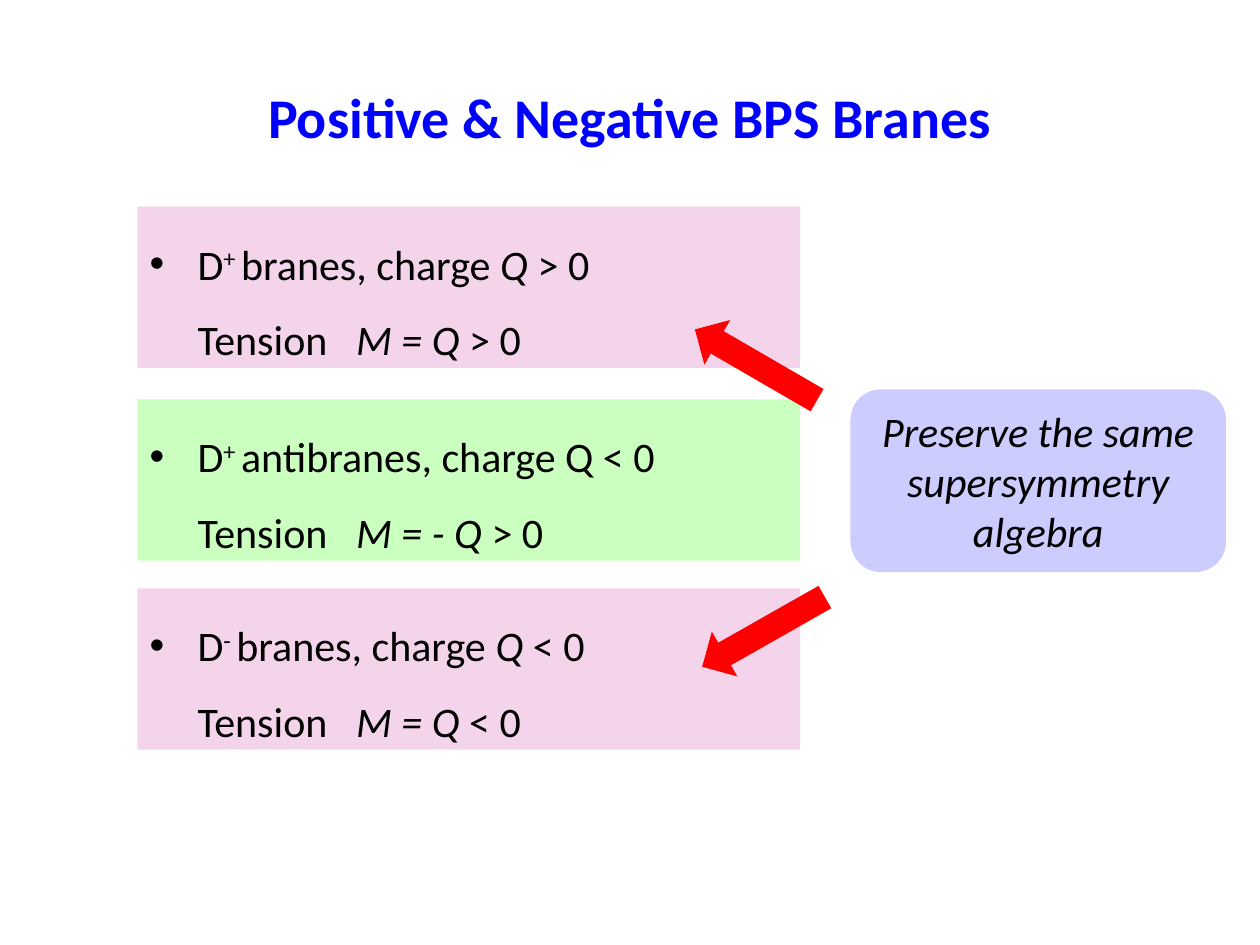
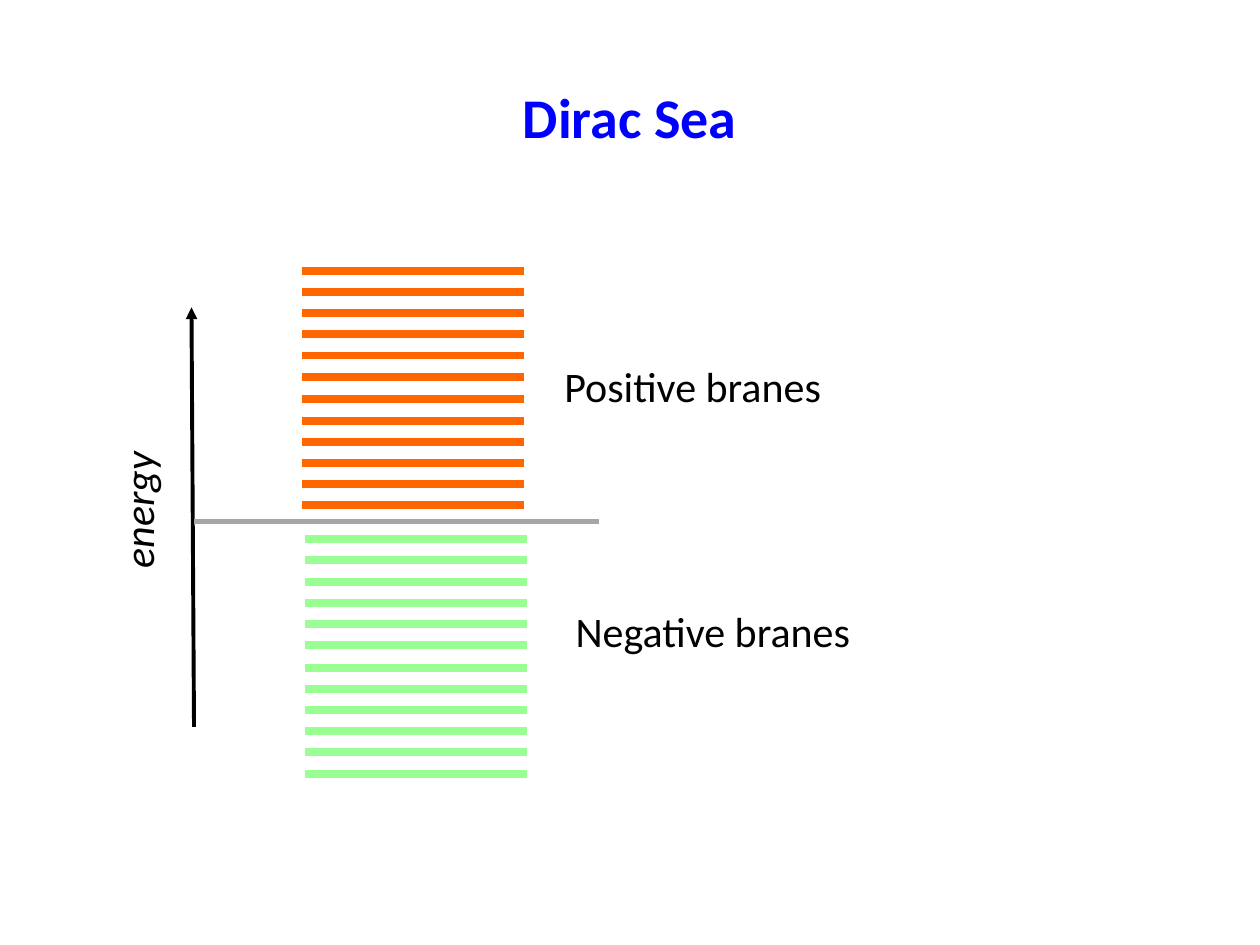
import dataclasses

import pptx
import pptx.dml.color
import pptx.enum.shapes
import pptx.enum.text
import pptx.oxml
import pptx.oxml.ns
import pptx.util

Inches, Pt = pptx.util.Inches, pptx.util.Pt
Shape = pptx.enum.shapes.MSO_SHAPE
Align = pptx.enum.text.PP_ALIGN
Anchor = pptx.enum.text.MSO_ANCHOR
Fit = pptx.enum.text.MSO_AUTO_SIZE


@dataclasses.dataclass(frozen=True)
class Theme:
    font: str = "Calibri"
    head: int = 32
    body: int = 24
    ink: str = "000000"
    blue: str = "0000FF"
    pink: str = "F3D4EB"
    mint: str = "CAFFC0"
    lilac: str = "CCCCFF"
    red: str = "FF0000"
    orange: str = "FF6600"
    green: str = "99FF92"
    gray: str = "A6A6A6"


def rgb(code):
    return pptx.dml.color.RGBColor.from_string(code)


def add_xml(parent, tag, **attrs):
    node = pptx.oxml.parse_xml(f"<a:{tag} {pptx.oxml.ns.nsdecls('a')}/>")
    for name, value in attrs.items():
        node.set(name, str(value))
    parent.append(node)


def write(frame, lines, font, size, color, bold=False, align=Align.LEFT,
          anchor=Anchor.TOP, wrap=True, grow=True, space=None, bullet=None):
    """Fill a frame with paragraphs, each a list of (text, style) runs.

    Styles are "", "italic", "super", "gap" (a wide space) and "break".
    """
    frame.word_wrap = wrap
    frame.vertical_anchor = anchor
    frame.auto_size = Fit.SHAPE_TO_FIT_TEXT if grow else Fit.NONE
    for i, runs in enumerate(lines):
        para = frame.add_paragraph() if i else frame.paragraphs[0]
        para.alignment = align
        if space:
            para.line_spacing = space
        if bullet:
            props = para._p.get_or_add_pPr()
            hang = Inches(0.38)
            props.set("marL", str(hang))
            props.set("indent", str(-hang))
            add_xml(props, "buFont", typeface="Arial")
            add_xml(props, "buChar", char=bullet)
        for text, style in runs:
            if style == "break":
                para.add_line_break()
                continue
            run = para.add_run()
            run.text = text
            run.font.name = font
            run.font.size = Pt(size)
            run.font.bold = bold
            run.font.italic = style == "italic"
            run.font.color.rgb = rgb(color)
            if style == "super":
                run.font._element.set("baseline", "30000")
            elif style == "gap":
                run.font._element.set("spc", "1085")


class Deck:
    def __init__(self, theme):
        self.theme = theme
        self.file = pptx.Presentation()
        self.file.slide_width = Inches(10)
        self.file.slide_height = Inches(7.5)
        self.slide = None

    def page(self, title):
        self.slide = self.file.slides.add_slide(self.file.slide_layouts[6])
        self.label([[(title, "")]], (0.5, 0.3, 9, 1.25), size=self.theme.head,
                   color=self.theme.blue, bold=True, align=Align.CENTER,
                   anchor=Anchor.MIDDLE, wrap=True, grow=False)

    def text(self, frame, lines, **style):
        base = dict(font=self.theme.font, size=self.theme.body,
                    color=self.theme.ink)
        write(frame, lines, **{**base, **style})

    def label(self, lines, box, turn=0, **style):
        item = self.slide.shapes.add_textbox(*map(Inches, box))
        item.rotation = turn
        self.text(item.text_frame, lines, **{"wrap": False, **style})

    def shape(self, kind, box, fill, lines=None, turn=0, **style):
        item = self.slide.shapes.add_shape(kind, *map(Inches, box))
        item.shadow.inherit = False
        item.fill.solid()
        item.fill.fore_color.rgb = rgb(fill)
        item.line.fill.background()
        item.rotation = turn
        if lines:
            self.text(item.text_frame, lines, **style)

    def line(self, start, end, color, width, arrow=False):
        item = self.slide.shapes.add_connector(
            pptx.enum.shapes.MSO_CONNECTOR.STRAIGHT,
            *map(Inches, start + end))
        item.line.color.rgb = rgb(color)
        item.line.width = Pt(width)
        if arrow:
            add_xml(item.line._get_or_add_ln(), "tailEnd", type="triangle")
        add_xml(item._element.spPr, "effectLst")

    def levels(self, left, top, color):
        """Draw two sets of six energy levels."""
        for block in range(2):
            for i in range(6):
                y = top + block * 1.02 + i * 0.168
                self.line((left, y), (left + 1.76, y), color, 4.5)


def branes(deck):
    theme = deck.theme
    deck.page("Positive & Negative BPS Branes")
    cards = [
        (4.67, theme.pink, "- ",
         [("branes, charge ", ""), ("Q ", "italic"), ("< 0", "")],
         "M = Q ", "< 0"),
        (3.17, theme.mint, "+ ",
         [("antibranes, charge Q < 0", "")], "M = - Q ", "> 0"),
        (1.64, theme.pink, "+ ",
         [("branes, charge ", ""), ("Q", "italic"), (" > 0", "")],
         "M = Q ", "> 0"),
    ]
    for top, fill, sign, charge, mass, bound in cards:
        runs = [("D", ""), (sign, "super"), *charge, ("", "break"),
                ("Tension", ""), (" ", "gap"), (mass, "italic"), (bound, "")]
        deck.shape(Shape.RECTANGLE, (1.09, top, 5.26, 1.28), fill, [runs],
                   space=1.5, bullet="•")
    note = ["Preserve the same", "supersymmetry", "algebra"]
    deck.shape(Shape.ROUNDED_RECTANGLE, (6.75, 3.09, 2.98, 1.45), theme.lilac,
               [[(row, "italic")] for row in note], align=Align.CENTER,
               anchor=Anchor.MIDDLE, wrap=False)
    for left, top, turn in ((5.44, 2.69, 210.1), (5.5, 4.81, 150.4)):
        deck.shape(Shape.RIGHT_ARROW, (left, top, 1.12, 0.41), theme.red,
                   turn=turn)


def sea(deck):
    theme = deck.theme
    deck.page("Dirac Sea")
    deck.line((1.54, 5.77), (1.52, 2.44), theme.ink, 2.25, arrow=True)
    deck.label([[("energy", "italic")]], (0.48, 3.8, 1.22, 0.5), turn=270,
               align=Align.CENTER)
    deck.levels(2.42, 4.28, theme.green)
    deck.levels(2.4, 2.15, theme.orange)
    deck.line((1.54, 4.14), (4.75, 4.14), theme.gray, 3)
    deck.label([[("Positive branes", "")]], (4.38, 2.81, 2.28, 0.5))
    deck.label([[("Negative branes", "")]], (4.47, 4.76, 2.42, 0.5))


def main():
    deck = Deck(Theme())
    branes(deck)
    sea(deck)
    deck.file.save("out.pptx")


if __name__ == "__main__":
    main()
